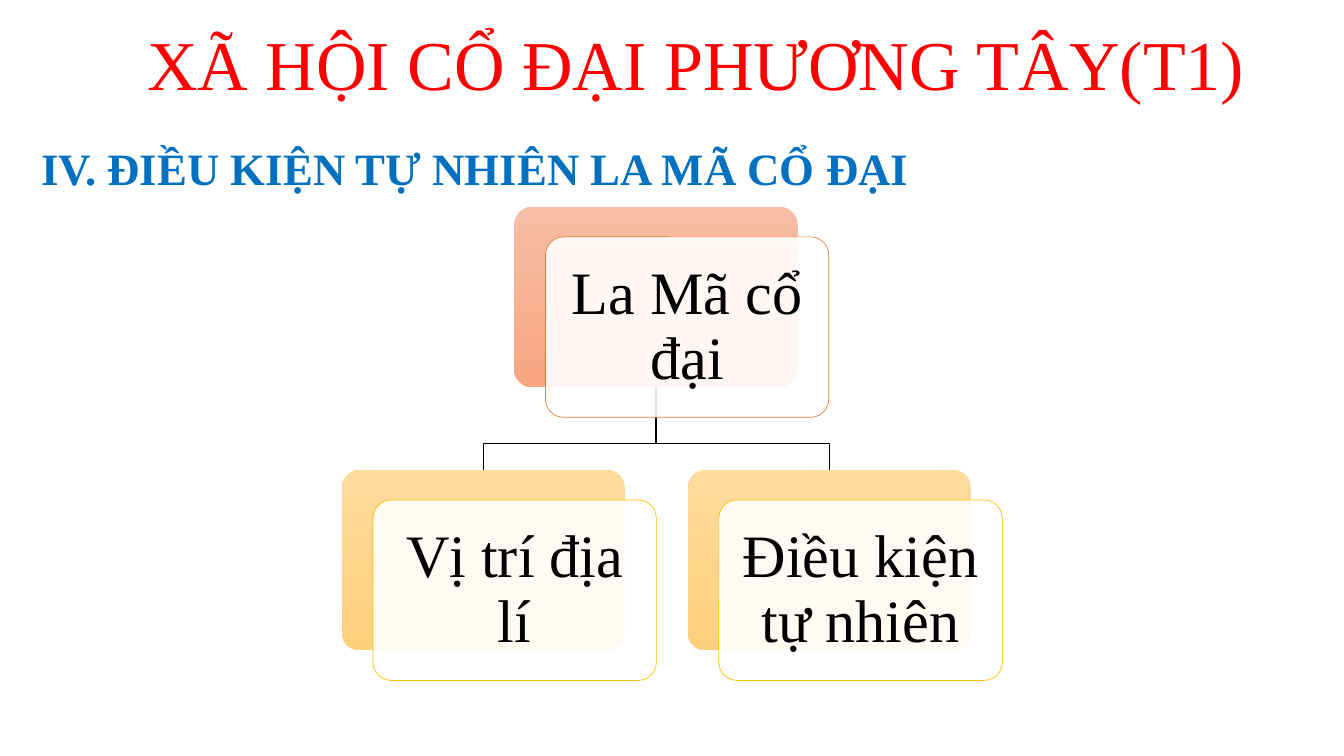
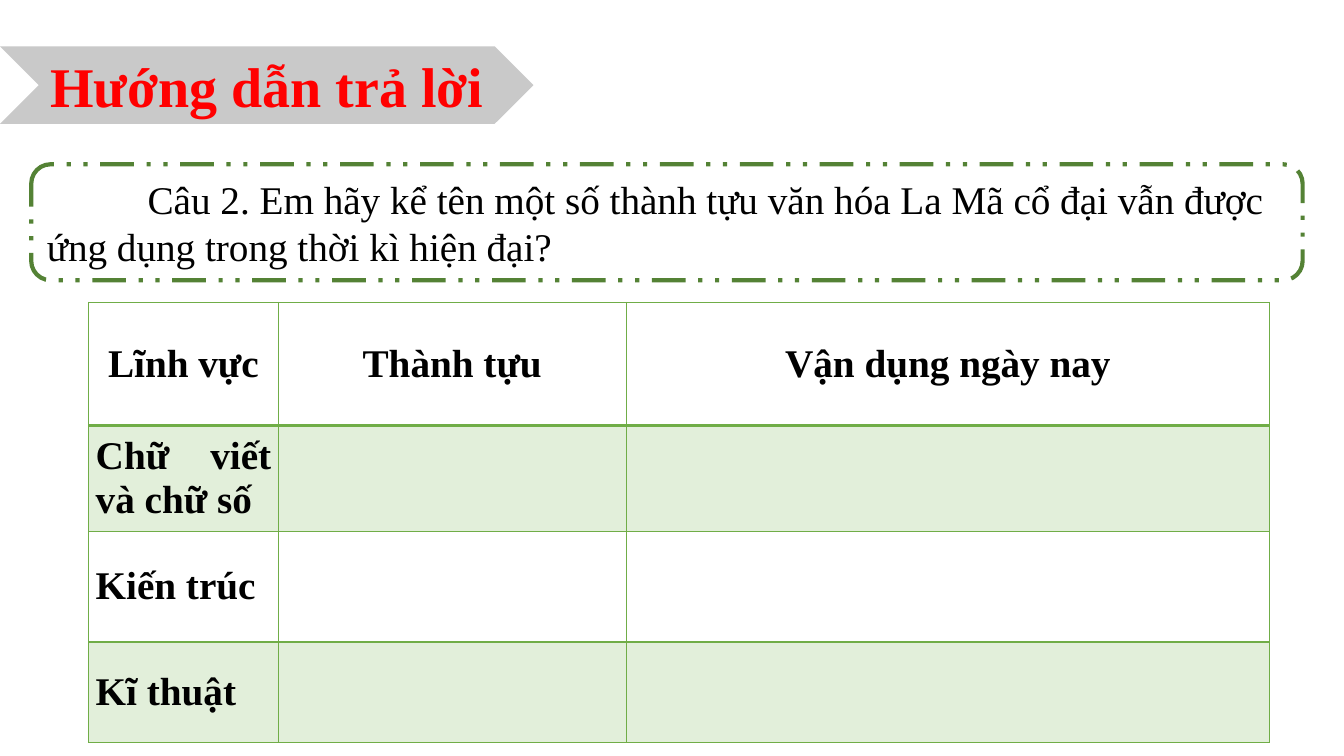
from lxml import etree
from pptx import Presentation
from pptx.dml.color import RGBColor
from pptx.enum.dml import MSO_LINE
from pptx.enum.shapes import MSO_SHAPE
from pptx.enum.text import MSO_ANCHOR, PP_ALIGN
from pptx.oxml.ns import qn
from pptx.util import Inches, Pt

ROUNDED, CHEVRON = MSO_SHAPE.ROUNDED_RECTANGLE, MSO_SHAPE.CHEVRON
LEFT, CENTER, JUSTIFY = PP_ALIGN.LEFT, PP_ALIGN.CENTER, PP_ALIGN.JUSTIFY
MIDDLE = MSO_ANCHOR.MIDDLE
DASH = MSO_LINE.DASH_DOT_DOT

FONT = "Times New Roman"
COLORS = {
    "black": "000000", "white": "FFFFFF", "red": "FF0000", "blue": "0070C0",
    "gray": "C9C9C9", "dark green": "548235", "green": "70AD47",
    "pale green": "E2EFDA", "orange": "ED7D31", "gold": "FFC000",
    "orange top": "F7BDA5", "orange bottom": "F8A582",
    "gold top": "FFDB9E", "gold bottom": "FFD07C",
}


def color(name):
    return RGBColor.from_string(COLORS[name])


def write(frame, text, size=28, ink="black", bold=False, align=LEFT,
          spacing=None, around=None, indent=0):
    """Fill a text frame with one formatted paragraph."""
    paragraph = frame.paragraphs[0]
    paragraph.alignment = align
    paragraph.line_spacing = spacing
    if around:
        paragraph.space_before = paragraph.space_after = Pt(around)
    if indent:
        paragraph._p.get_or_add_pPr().set("indent", str(Inches(indent)))
    run = paragraph.add_run()
    run.text = text
    run.font.name = FONT
    run.font.size = Pt(size)
    run.font.bold = bold
    run.font.color.rgb = color(ink)


class Deck:
    """Holds the presentation, its style and the current slide."""

    def __init__(self):
        self.presentation = Presentation()
        self.presentation.slide_width = Inches(13.33)
        self.presentation.slide_height = Inches(7.5)
        self.slide = None

    def new_slide(self):
        layout = self.presentation.slide_layouts[6]
        self.slide = self.presentation.slides.add_slide(layout)

    def text(self, text, left, top, width, height, wrap=True, **style):
        box = self.slide.shapes.add_textbox(
            Inches(left), Inches(top), Inches(width), Inches(height))
        box.text_frame.word_wrap = wrap
        write(box.text_frame, text, **style)

    def shape(self, kind, left, top, width, height, fill=None, line=None,
              line_width=0.5, corner=None):
        shape = self.slide.shapes.add_shape(
            kind, Inches(left), Inches(top), Inches(width), Inches(height))
        shape.shadow.inherit = False
        if corner:
            shape.adjustments[0] = corner
        if fill:
            shape.fill.solid()
            shape.fill.fore_color.rgb = color(fill)
        if line:
            shape.line.color.rgb = color(line)
            shape.line.width = Pt(line_width)
        else:
            shape.line.fill.background()
        shape.text_frame.vertical_anchor = MIDDLE
        return shape

    def branch(self, points):
        (left, top), *others = [(Inches(x), Inches(y)) for x, y in points]
        builder = self.slide.shapes.build_freeform(left, top)
        builder.add_line_segments(others, close=False)
        line = builder.convert_to_shape()
        line.shadow.inherit = False
        line.fill.background()
        line.line.color.rgb = color("black")
        line.line.width = Pt(0.5)

    def card(self, text, left, top, width, height, hue):
        # Gradient panel behind
        panel = self.shape(ROUNDED, left, top, width, height, corner=0.1)
        panel.fill.gradient()
        panel.fill.gradient_angle = 270
        for stop, end in zip(panel.fill.gradient_stops, ("top", "bottom")):
            stop.color.rgb = color(f"{hue} {end}")
        # Translucent label in front
        label = self.shape(ROUNDED, left + 0.31, top + 0.3, width, height,
                           "white", hue, corner=0.1)
        tint = label.fill._xPr.find(".//" + qn("a:srgbClr"))
        etree.SubElement(tint, qn("a:alpha"), val="90000")
        frame = label.text_frame
        frame.word_wrap = True
        frame.margin_left = frame.margin_right = Inches(0.17)
        write(frame, text, size=43, align=CENTER, spacing=0.9)

    def border(self, cell, bottom):
        properties = cell._tc.get_or_add_tcPr()
        widths = {"lnL": 1, "lnR": 1, "lnT": 1, "lnB": bottom}
        for position, (side, width) in enumerate(widths.items()):
            line = etree.Element(qn("a:" + side), w=str(Pt(width)))
            fill = etree.SubElement(line, qn("a:solidFill"))
            etree.SubElement(fill, qn("a:srgbClr"), val=COLORS["green"])
            properties.insert(position, line)

    def table(self, left, top, widths, heights, header, labels):
        rows = [header] + [[label] + [""] * (len(widths) - 1) for label in labels]
        table = self.slide.shapes.add_table(
            len(rows), len(widths), Inches(left), Inches(top),
            Inches(sum(widths)), Inches(sum(heights))).table
        table.first_row = table.horz_banding = False
        for column, width in zip(table.columns, widths):
            column.width = Inches(width)
        for row, height in zip(table.rows, heights):
            row.height = Inches(height)
        for i, texts in enumerate(rows):
            for j, text in enumerate(texts):
                cell = table.cell(i, j)
                if i % 2:
                    cell.fill.solid()
                    cell.fill.fore_color.rgb = color("pale green")
                else:
                    cell.fill.background()
                self.border(cell, bottom=1 if i else 2)
                cell.vertical_anchor = MIDDLE
                cell.margin_left = cell.margin_right = Inches(0.07)
                cell.margin_top = cell.margin_bottom = 0
                if text:
                    write(cell.text_frame, text, bold=True, around=6,
                          align=JUSTIFY if i else CENTER)


def build_conditions(deck):
    deck.new_slide()
    deck.text("IV. ĐIỀU KIỆN TỰ NHIÊN LA MÃ CỔ ĐẠI", 0.31, 1.41, 12.7, 0.6,
              size=32, ink="blue", bold=True, spacing=0.9)

    # Hierarchy: one parent above two children
    width, height = 2.81, 1.79
    parent_left, parent_top, child_top = 5.1, 2.05, 4.66
    children = {"Vị trí địa lí": 3.39, "Điều kiện tự nhiên": 6.82}
    middle = parent_left + width / 2
    for left in children.values():
        end = left + width / 2
        deck.branch([(middle, parent_top + height), (middle, 4.4),
                     (end, 4.4), (end, child_top)])
    deck.card("La Mã cổ đại", parent_left, parent_top, width, height, "orange")
    for text, left in children.items():
        deck.card(text, left, child_top, width, height, "gold")

    deck.text("XÃ HỘI CỔ ĐẠI PHƯƠNG TÂY(T1)", 1.31, 0.15, 11.19, 0.94,
              wrap=False, size=50, ink="red", align=CENTER)


def build_answer_guide(deck):
    deck.new_slide()
    # Heading
    heading = deck.shape(CHEVRON, 0, 0.46, 5.29, 0.77, "gray")
    heading.text_frame.word_wrap = False
    write(heading.text_frame, "Hướng dẫn trả lời", size=40, ink="red",
          bold=True, align=CENTER)

    # Question
    question = deck.shape(ROUNDED, 0.31, 1.63, 12.61, 1.15, "white",
                          "dark green", line_width=3)
    question.line.dash_style = DASH
    question.text_frame.word_wrap = True
    write(question.text_frame,
          "Câu 2. Em hãy kể tên một số thành tựu văn hóa La Mã cổ đại "
          "vẫn được ứng dụng trong thời kì hiện đại?", indent=1)

    # Answer table
    deck.table(0.88, 3, [1.88, 3.45, 6.38], [1.22, 1.05, 1.1, 1],
               ["Lĩnh vực", "Thành tựu", "Vận dụng ngày nay"],
               ["Chữ viết và chữ số", "Kiến trúc", "Kĩ thuật"])


def main():
    deck = Deck()
    build_conditions(deck)
    build_answer_guide(deck)
    deck.presentation.save("out.pptx")


if __name__ == "__main__":
    main()
